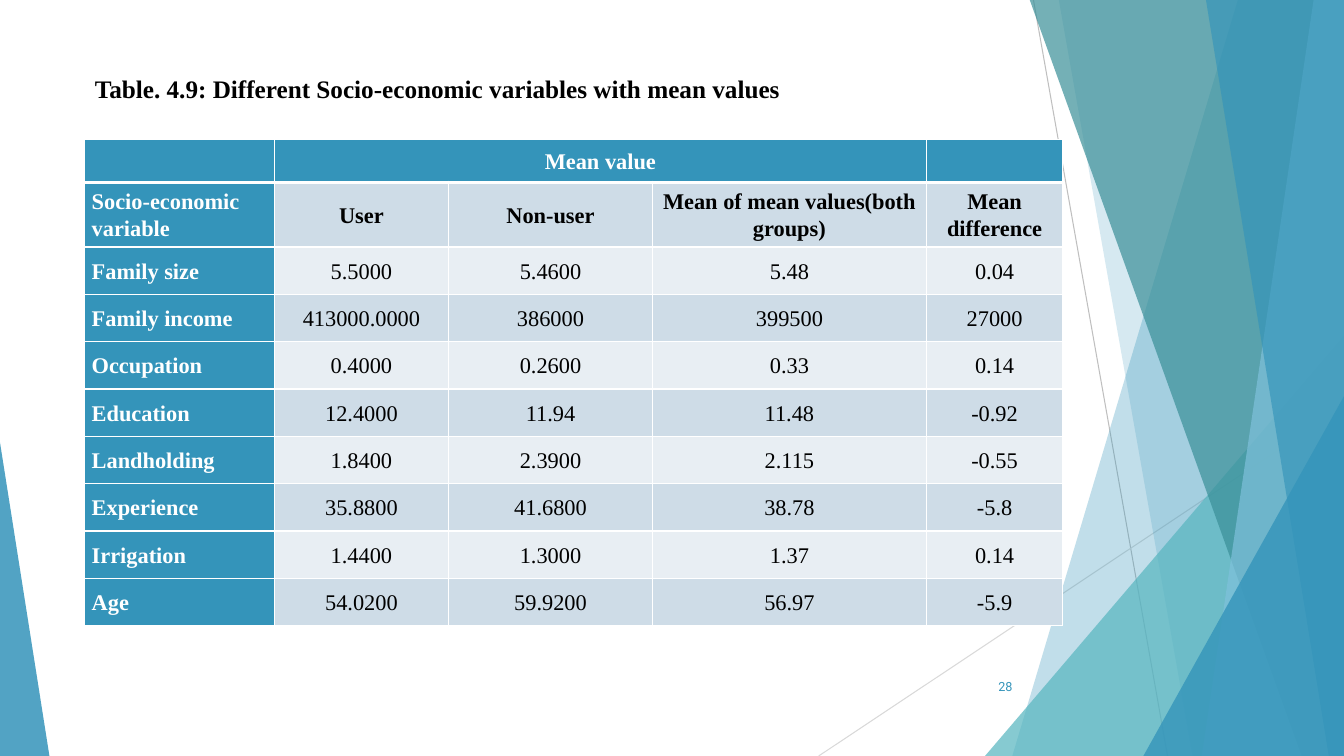
"""Builds the slide with the table of socio-economic mean values."""
from lxml import etree
from pptx import Presentation
from pptx.dml.color import RGBColor
from pptx.enum.shapes import MSO_CONNECTOR, MSO_SHAPE
from pptx.enum.text import MSO_ANCHOR, MSO_AUTO_SIZE, PP_ALIGN
from pptx.oxml.ns import qn
from pptx.util import Pt

PX = 9144
WIDE, HIGH = 1333, 750
SERIF, SANS = "Times New Roman", "Roboto"
BLUE = RGBColor(0x34, 0x94, 0xBA)
TEAL = RGBColor(0x58, 0xB6, 0xC0)
DEEP = RGBColor(0x3A, 0x8F, 0x98)
SKY = RGBColor(0x7F, 0xC1, 0xDB)
BAND = RGBColor(0xCE, 0xDC, 0xE7)
PALE = RGBColor(0xE8, 0xEE, 0xF3)
GREY = RGBColor(0xBF, 0xBF, 0xBF)
MIST = RGBColor(0xD9, 0xD9, 0xD9)
BLACK = RGBColor(0, 0, 0)
WHITE = RGBColor(0xFF, 0xFF, 0xFF)
LEFT, MID, RIGHT = PP_ALIGN.LEFT, PP_ALIGN.CENTER, PP_ALIGN.RIGHT
JUST = PP_ALIGN.JUSTIFY
TOP, CENTRE = MSO_ANCHOR.TOP, MSO_ANCHOR.MIDDLE
GROW = MSO_AUTO_SIZE.SHAPE_TO_FIT_TEXT
TRI = MSO_SHAPE.ISOSCELES_TRIANGLE
LINE = MSO_CONNECTOR.STRAIGHT


def tint(shape, color, alpha):
    """Fill a shape with a partly clear colour and no outline."""
    shape.shadow.inherit = False
    shape.line.fill.background()
    shape.fill.solid()
    shape.fill.fore_color.rgb = color
    tone = shape.fill._xPr.find(qn("a:solidFill"))[0]
    etree.SubElement(tone, qn("a:alpha"), val=str(alpha * 1000))


def write(frame, text, size, font, color, bold, align, space):
    """Write one run in the first paragraph of a text frame."""
    para = frame.paragraphs[0]
    para.alignment = align
    para.line_spacing = space
    run = para.add_run()
    run.text = text
    run.font.size = Pt(size)
    run.font.name = font
    run.font.bold = bold
    run.font.color.rgb = color


deck = Presentation()
deck.slide_width, deck.slide_height = WIDE * PX, HIGH * PX
slide = deck.slides.add_slide(deck.slide_layouts[5])
shapes = slide.shapes

for x1, y1, x2, y2, color in [
    (1025, 0, 1158, HIGH, GREY),
    (WIDE, 403, 812, HIGH, MIST),
]:
    line = shapes.add_connector(LINE, x1 * PX, y1 * PX, x2 * PX, y2 * PX)
    line.line.color.rgb = color
    line.line.width = Pt(0.75)
    etree.SubElement(line._element.spPr, qn("a:effectLst"))

facets = [
    ("band", (1228, 1004), BLUE, 30),
    ("band", (1050, 1183), BLUE, 20),
    ("tri", (977, 333, 356, 417, 1), TEAL, 72),
    ("band", (1021, 1291), DEEP, 70),
    ("band", (1303, 1192), SKY, 70),
    ("band", (1196, 1318), BLUE, 65),
    ("tri", (1134, 393, 199, 357, 1), BLUE, 80),
    ("tri", (0, 439, 49, 311, 0), BLUE, 85),
]
for kind, place, color, alpha in facets:
    if kind == "band":
        top, foot = place
        pen = shapes.build_freeform(top, -1, scale=PX)
        pen.add_line_segments([(WIDE, -1), (WIDE, HIGH), (foot, HIGH)])
        facet = pen.convert_to_shape()
    else:
        x, y, w, h, peak = place
        facet = shapes.add_shape(TRI, x * PX, y * PX, w * PX, h * PX)
        facet.adjustments[0] = peak
    tint(facet, color, alpha)

rows = [
    ("", "Mean value", "", "", ""),
    ("Socio-economic variable", "User", "Non-user",
     "Mean of mean values(both groups)", "Mean difference"),
    ("Family size", "5.5000", "5.4600", "5.48", "0.04"),
    ("Family income", "413000.0000", "386000", "399500", "27000"),
    ("Occupation", "0.4000", "0.2600", "0.33", "0.14"),
    ("Education", "12.4000", "11.94", "11.48", "-0.92"),
    ("Landholding", "1.8400", "2.3900", "2.115", "-0.55"),
    ("Experience", "35.8800", "41.6800", "38.78", "-5.8"),
    ("Irrigation", "1.4400", "1.3000", "1.37", "0.14"),
    ("Age", "54.0200", "59.9200", "56.97", "-5.9"),
]
widths = [188, 173, 202, 272, 135]
heights = [43, 64] + [47] * 8
frame = shapes.add_table(len(rows), len(widths), 84 * PX, 138 * PX,
                         sum(widths) * PX, sum(heights) * PX)
table = frame.table
table.first_row = table.horz_banding = False
for col, width in zip(table.columns, widths):
    col.width = width * PX
for row, height in zip(table.rows, heights):
    row.height = height * PX
table.cell(0, 1).merge(table.cell(0, 3))

for r, row in enumerate(rows):
    for c, text in enumerate(row):
        cell = table.cell(r, c)
        cell.margin_left = cell.margin_right = 7 * PX
        cell.margin_top = cell.margin_bottom = 0
        cell.vertical_anchor = CENTRE
        props = cell._tc.get_or_add_tcPr()
        for side in "LRTB":
            thick = (r, side) in [(0, "B"), (1, "T")]
            edge = etree.SubElement(props, qn("a:ln" + side),
                                    w=str(Pt(3 if thick else 1)))
            fill = etree.SubElement(edge, qn("a:solidFill"))
            etree.SubElement(fill, qn("a:srgbClr"), val=str(WHITE))
        head = r == 0 or c == 0
        cell.fill.solid()
        cell.fill.fore_color.rgb = BLUE if head else BAND if r % 2 else PALE
        if text:
            write(cell.text_frame, text, 16, SERIF, WHITE if head else BLACK,
                  head or r == 1, MID if c else LEFT, 1.07)

title = shapes.title
title.left, title.top = 84 * PX, 53 * PX
title.width, title.height = 798 * PX, 56 * PX
title.text_frame.word_wrap = True
title.text_frame.auto_size = GROW
title.text_frame.vertical_anchor = TOP
write(title.text_frame,
      "Table. 4.9: Different Socio-economic variables with mean values",
      18, SERIF, BLACK, True, JUST, 1.5)

page = shapes.add_textbox(939 * PX, 661 * PX, 75 * PX, 40 * PX)
page.text_frame.word_wrap = True
page.text_frame.vertical_anchor = CENTRE
write(page.text_frame, "28", 9, SANS, BLUE, False, RIGHT, 1.0)

deck.save("out.pptx")
